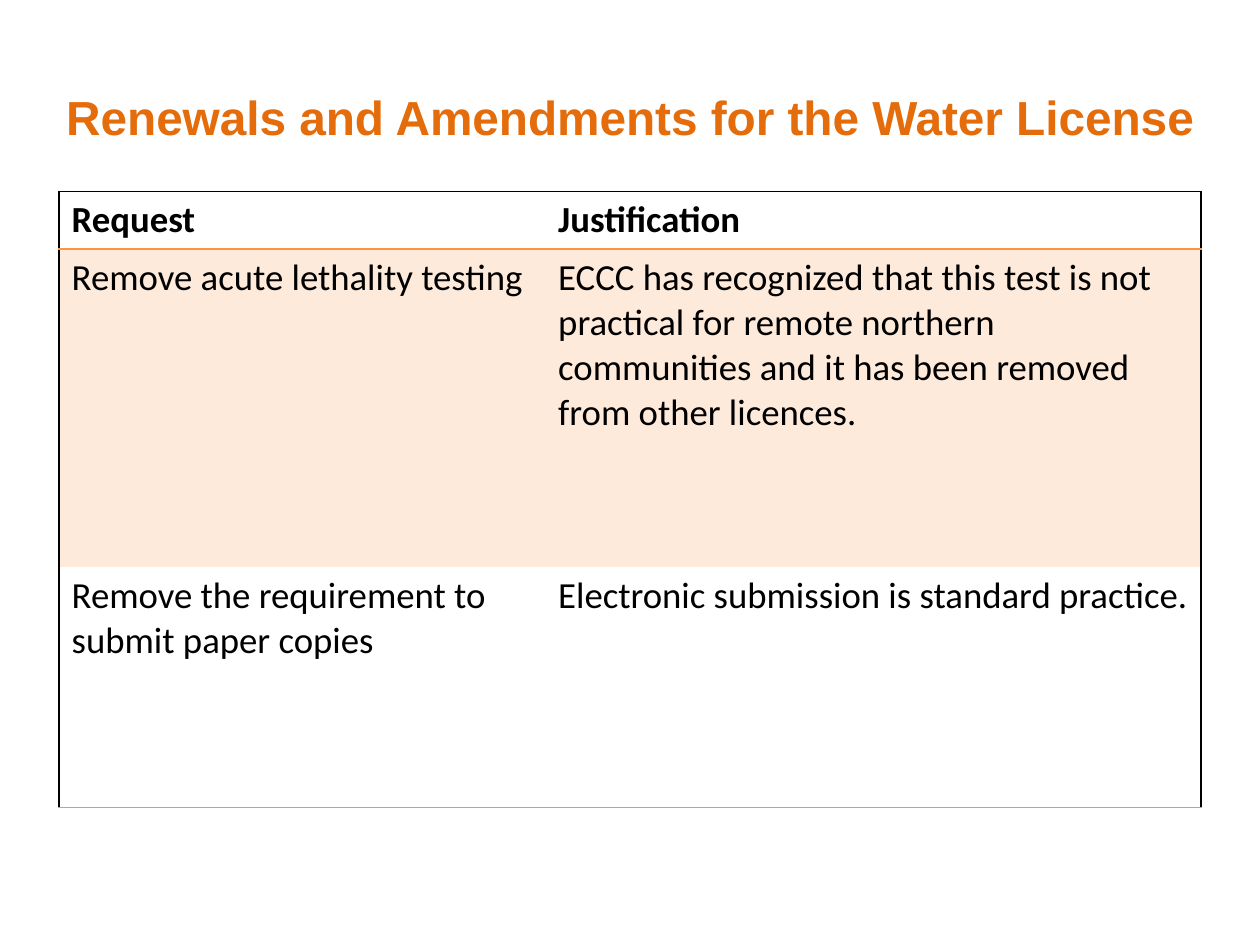
from lxml.etree import SubElement
from pptx import Presentation
from pptx.dml.color import RGBColor
from pptx.enum.text import MSO_ANCHOR as Anchor, PP_ALIGN as Align
from pptx.oxml.ns import qn
from pptx.util import Pt

ORANGE, BLACK, TITLE_ORANGE = "F79646", "000000", "E46C0A"
COLUMN_WIDTHS = [278, 374.4]
ROW_HEIGHTS = [32.8, 181.8, 137.4]
REQUESTS = [
    ("Request", "Justification"),
    ("Remove acute lethality testing",
     "ECCC has recognized that this test is not practical for remote northern "
     "communities and it has been removed from other licences."),
    ("Remove the requirement to submit paper copies",
     "Electronic submission is standard practice."),
]


def color(hex_code):
    return RGBColor.from_string(hex_code)


class SlideBuilder:
    """Holds the text style and the slide being built."""

    title_style = {"name": "Arial", "size": Pt(27.3), "bold": True}
    body_style = {"name": "Calibri", "size": Pt(21), "bold": False}

    def __init__(self, slide):
        self.slide = slide

    def add_text(self, paragraph, text, hex_code, style):
        run = paragraph.add_run()
        run.text = text
        for key, value in style.items():
            setattr(run.font, key, value)
        run.font.color.rgb = color(hex_code)

    def title(self, text, left, top, width, height):
        box = self.slide.shapes.add_textbox(Pt(left), Pt(top), Pt(width), Pt(height))
        frame = box.text_frame
        frame.word_wrap = True
        frame.vertical_anchor = Anchor.MIDDLE
        heading = frame.paragraphs[0]
        heading.alignment = Align.CENTER
        self.add_text(heading, text, TITLE_ORANGE, self.title_style)

    def border(self, cell, side, hex_code):
        line = SubElement(cell._tc.get_or_add_tcPr(), qn(f"a:ln{side}"), w=str(Pt(1)))
        if hex_code is None:
            SubElement(line, qn("a:noFill"))
        else:
            solid = SubElement(line, qn("a:solidFill"))
            SubElement(solid, qn("a:srgbClr"), val=hex_code)

    def shade(self, cell, hex_code, opacity):
        cell.fill.solid()
        cell.fill.fore_color.rgb = color(hex_code)
        tint = cell._tc.tcPr.find(qn("a:solidFill")).find(qn("a:srgbClr"))
        SubElement(tint, qn("a:alpha"), val=str(opacity * 1000))

    def table(self, rows, left, top, widths, heights):
        frame = self.slide.shapes.add_table(
            len(rows), len(widths), Pt(left), Pt(top), Pt(sum(widths)), Pt(sum(heights)))
        grid = frame.table
        for column, width in zip(grid.columns, widths):
            column.width = Pt(width)
        for row, height in zip(grid.rows, heights):
            row.height = Pt(height)
        last_row, last_column = len(rows) - 1, len(widths) - 1
        for r, texts in enumerate(rows):
            for c, text in enumerate(texts):
                cell = grid.cell(r, c)
                style = {**self.body_style, "bold": r == 0}
                self.add_text(cell.text_frame.paragraphs[0], text, BLACK, style)
                edges = {
                    "L": BLACK if c == 0 else None,
                    "R": BLACK if c == last_column else None,
                    "T": {0: BLACK, 1: ORANGE}.get(r),
                    "B": ORANGE if r in (0, last_row) else None,
                }
                for side, hex_code in edges.items():
                    self.border(cell, side, hex_code)
                if r % 2:
                    self.shade(cell, ORANGE, 20)
                else:
                    cell.fill.background()


def main():
    deck = Presentation()
    deck.slide_width, deck.slide_height = Pt(720), Pt(540)
    builder = SlideBuilder(deck.slides.add_slide(deck.slide_layouts[6]))
    builder.title("Renewals and Amendments for the Water License", 0, 21.6, 720, 90)
    builder.table(REQUESTS, 33.8, 109.4, COLUMN_WIDTHS, ROW_HEIGHTS)
    deck.save("out.pptx")


if __name__ == "__main__":
    main()
